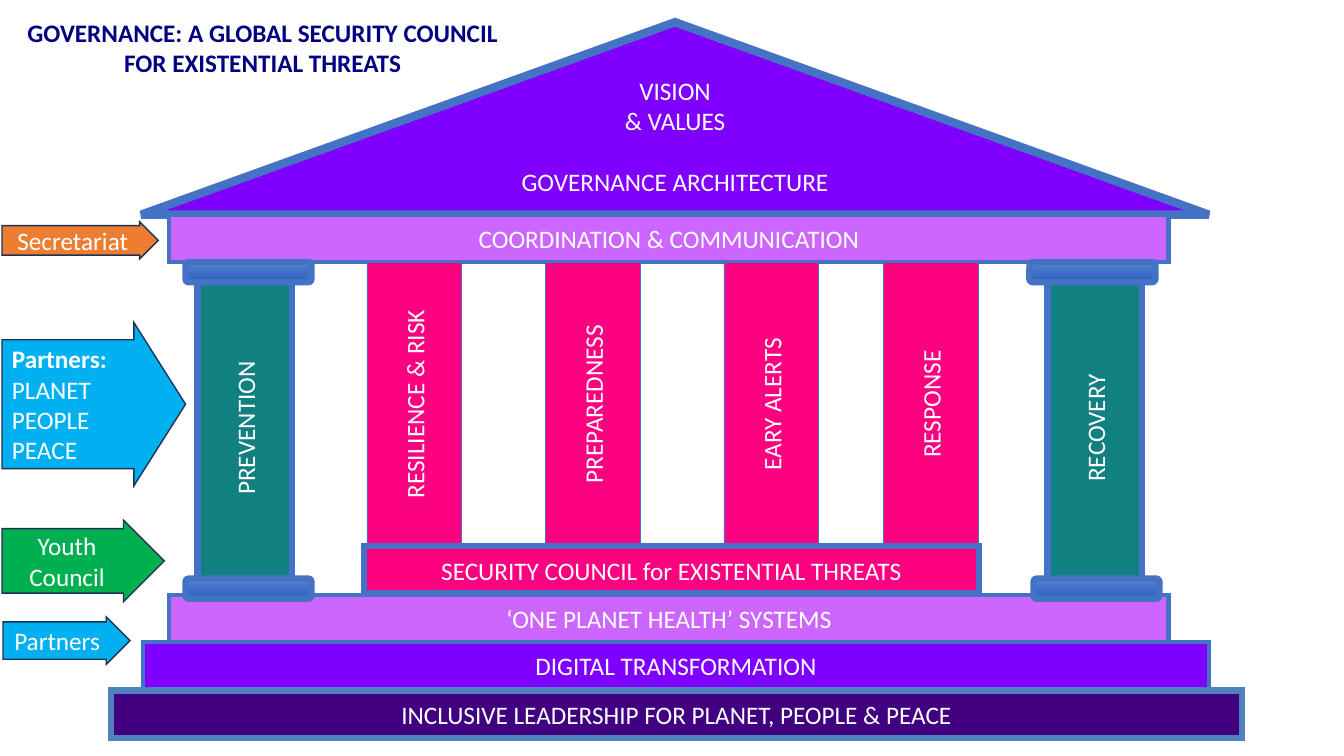
from copy import deepcopy
from dataclasses import dataclass

from lxml import etree
from pptx import Presentation
from pptx.dml.color import RGBColor
from pptx.enum.shapes import MSO_SHAPE
from pptx.enum.text import MSO_ANCHOR, MSO_AUTO_SIZE, PP_ALIGN
from pptx.oxml.ns import qn
from pptx.util import Inches, Pt

TRIANGLE = MSO_SHAPE.ISOSCELES_TRIANGLE
RECTANGLE = MSO_SHAPE.RECTANGLE
ROUNDED = MSO_SHAPE.ROUNDED_RECTANGLE
ARROW = MSO_SHAPE.RIGHT_ARROW
TOP, MIDDLE = MSO_ANCHOR.TOP, MSO_ANCHOR.MIDDLE
LEFT, CENTER = PP_ALIGN.LEFT, PP_ALIGN.CENTER
NO_AUTOFIT = MSO_AUTO_SIZE.NONE


@dataclass(frozen=True)
class Theme:
    font: str = "Calibri"
    size: int = 18
    white: str = "FFFFFF"
    navy: str = "000080"
    violet: str = "8000FF"
    lilac: str = "CC66FF"
    indigo: str = "400080"
    teal: str = "108080"
    pink: str = "FC0280"
    orange: str = "ED7D31"
    sky: str = "00B0F0"
    green: str = "00B050"
    edge: str = "4472C4"
    base_edge: str = "4F81BD"
    arrow_edge: str = "1E3256"
    capital: tuple = ((0, "6183CB"), (0.5, "3E70CA"), (1, "3062BB"))


theme = Theme()


def write(frame, lines, color=theme.white, align=CENTER, bold_lines=0):
    for index, line in enumerate(lines):
        para = frame.paragraphs[0] if index == 0 else frame.add_paragraph()
        para.alignment = align
        span = para.add_run()
        span.text = line
        span.font.name = theme.font
        span.font.size = Pt(theme.size)
        span.font.bold = index < bold_lines
        span.font.color.rgb = RGBColor.from_string(color)


def block(kind, place, fill, edge, weight, lines=(), **style):
    shape = page.shapes.add_shape(kind, *[Inches(length) for length in place])
    shape.shadow.inherit = False
    if fill:
        shape.fill.solid()
        shape.fill.fore_color.rgb = RGBColor.from_string(fill)
    shape.line.color.rgb = RGBColor.from_string(edge)
    shape.line.width = Pt(weight)
    etree.SubElement(shape.line._get_or_add_ln(), qn("a:miter"), lim="800000")
    shape.text_frame.vertical_anchor = MIDDLE
    write(shape.text_frame, lines, **style)
    return shape


deck = Presentation()
deck.slide_width, deck.slide_height = Inches(13.33), Inches(7.5)
page = deck.slides.add_slide(deck.slide_layouts[5])

# Title
title = page.shapes.title
title.left, title.top = Inches(0.15), Inches(0.12)
title.width, title.height = Inches(4.91), Inches(0.71)
title.text_frame.word_wrap = False
title.text_frame.auto_size = NO_AUTOFIT
title.text_frame.vertical_anchor = TOP
write(title.text_frame,
      ["GOVERNANCE: A GLOBAL SECURITY COUNCIL", "FOR EXISTENTIAL THREATS"],
      color=theme.navy, bold_lines=2)

# Roof
roof = block(TRIANGLE, (1.4, 0.22, 10.59, 1.91), theme.violet, theme.edge, 6,
             ["VISION", "& VALUES", "GOVERNANCE ARCHITECTURE"])
roof.text_frame.margin_bottom = Inches(0.66)
roof.text_frame.paragraphs[2].space_before = Pt(22)

# Beam and steps
BAR_HEIGHT = 0.47
bars = [
    (1.68, 2.13, 9.91, theme.lilac, theme.edge, 3, "COORDINATION & COMMUNICATION"),
    (1.68, 5.9, 9.91, theme.lilac, theme.edge, 3, "‘ONE PLANET HEALTH’ SYSTEMS"),
    (1.42, 6.37, 10.57, theme.violet, theme.edge, 3, "DIGITAL TRANSFORMATION"),
    (1.1, 6.85, 11.22, theme.indigo, theme.base_edge, 4.5,
     "INCLUSIVE LEADERSHIP FOR PLANET, PEOPLE & PEACE"),
]
for left, top, width, fill, edge, weight, label in bars:
    block(RECTANGLE, (left, top, width, BAR_HEIGHT), fill, edge, weight, [label])

# Pillars
COLUMN_TOP, COLUMN_WIDTH = 2.6, 0.94
outer = (3.29, theme.teal, 4.5)
inner = (2.82, theme.pink, 0.5)
pillars = [
    (1.96, outer, "PREVENTION"),
    (3.64, inner, "RESILIENCE & RISK"),
    (5.41, inner, "PREPAREDNESS"),
    (7.18, inner, "EARY ALERTS"),
    (8.76, inner, "RESPONSE"),
    (10.39, outer, "RECOVERY"),
]
for left, (height, fill, weight), label in pillars:
    pillar = block(RECTANGLE, (left, COLUMN_TOP, COLUMN_WIDTH, height),
                   fill, theme.edge, weight, [label])
    pillar.text_frame._txBody.bodyPr.set("vert", "vert270")

# Capitals and feet of the outer pillars
for left, top in [(10.21, 2.6), (1.84, 5.74), (1.84, 2.6), (10.25, 5.74)]:
    capital = block(ROUNDED, (left, top, 1.25, 0.2), None, theme.edge, 4.5)
    capital.fill.gradient()
    capital.fill.gradient_angle = 270
    stop_list = capital._element.spPr.find(".//" + qn("a:gsLst"))
    stop_list.append(deepcopy(stop_list[0]))
    for stop, (position, color) in zip(capital.fill.gradient_stops, theme.capital):
        stop.position = position
        stop.color.rgb = RGBColor.from_string(color)

# Council under the inner pillars
block(RECTANGLE, (3.61, 5.42, 6.1, BAR_HEIGHT), theme.pink, theme.edge, 4.5,
      ["SECURITY COUNCIL for EXISTENTIAL THREATS"])

# Arrows from contributors
arrows = [
    ((0.02, 5.16, 1.61, 0.81), 0.5, theme.green, ["Youth", "Council"], CENTER, 0),
    ((0.02, 3.2, 1.82, 1.62), 0.316, theme.sky,
     ["Partners:", "PLANET", "PEOPLE", "PEACE"], LEFT, 1),
    ((0.02, 2.2, 1.55, 0.37), 0.5, theme.orange, ["Secretariat"], CENTER, 0),
    ((0.03, 6.12, 1.26, 0.47), 0.5, theme.sky, ["Partners"], CENTER, 0),
]
for place, head, fill, lines, align, bold_lines in arrows:
    arrow = block(ARROW, place, fill, theme.arrow_edge, 1, lines,
                  align=align, bold_lines=bold_lines)
    arrow.adjustments[0] = 0.79
    arrow.adjustments[1] = head

deck.save("out.pptx")
